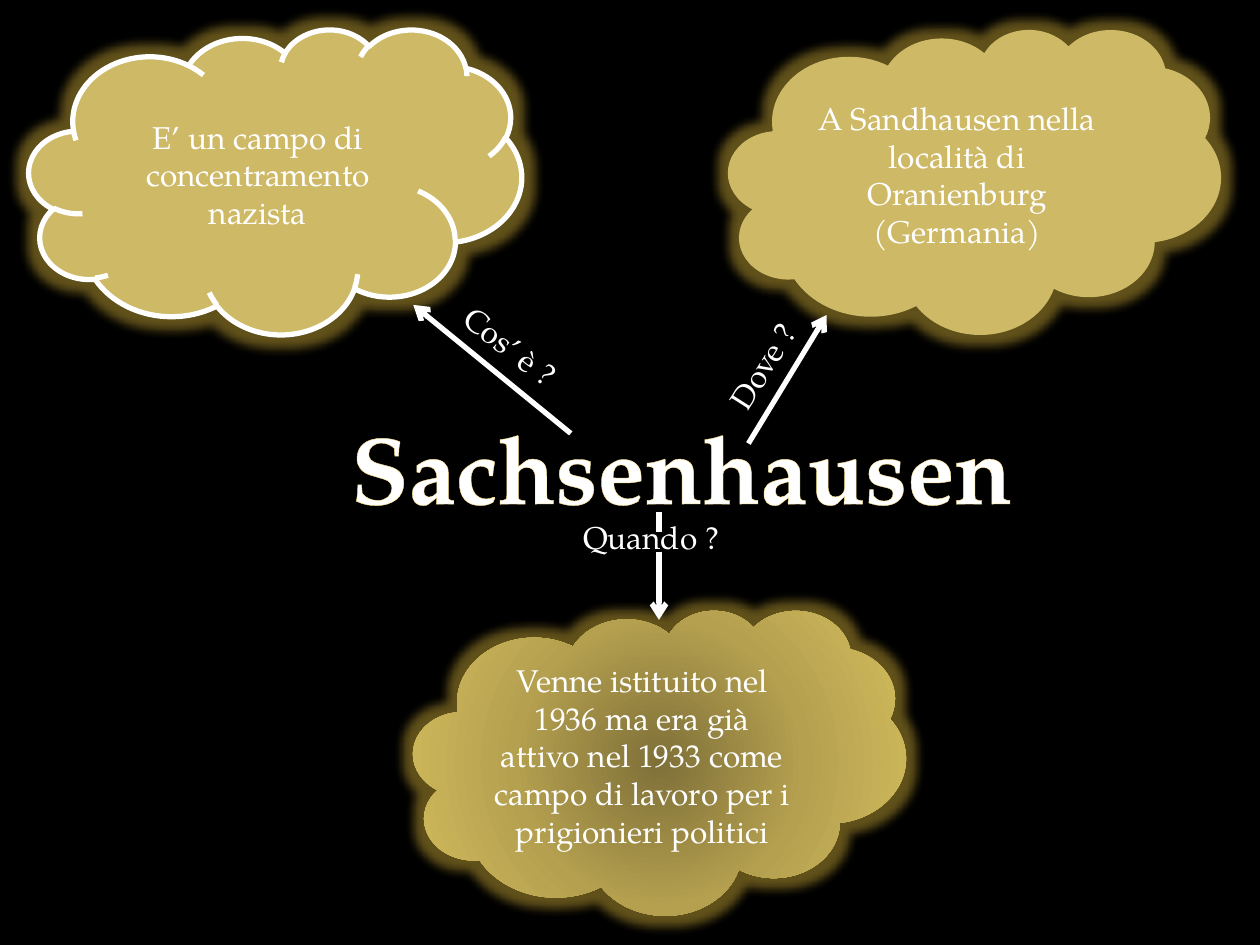
from dataclasses import dataclass

from lxml.etree import SubElement
from pptx import Presentation
from pptx.dml.color import RGBColor
from pptx.enum.shapes import MSO_CONNECTOR, MSO_SHAPE
from pptx.enum.text import MSO_ANCHOR, MSO_AUTO_SIZE, PP_ALIGN
from pptx.oxml import parse_xml
from pptx.oxml.ns import nsdecls, qn
from pptx.util import Inches, Pt


@dataclass(frozen=True)
class Theme:
    font: str = "TeX Gyre Pagella"
    background: str = "000000"
    ink: str = "FFFFFF"
    gold: str = "CEB966"
    glow: str = "F0C841"
    title_outline: str = "F7DC85"
    gradient: tuple = ((0, "7F7038"), (50, "B4A04F"), (100, "D6BE5E"))
    title_size: float = 54
    body_size: float = 18
    line_width: float = 3
    outline_width: float = 2.48
    glow_radius: float = 11
    glow_alpha: int = 40


def color(value):
    return RGBColor.from_string(value)


def write(frame, text, *, font, size, ink, bold=False, align=PP_ALIGN.LEFT):
    """Put one formatted paragraph in a text frame and return its run."""
    paragraph = frame.paragraphs[0]
    paragraph.alignment = align
    run = paragraph.add_run()
    run.text = text
    run.font.name = font
    run.font.size = Pt(size)
    run.font.bold = bold
    run.font.color.rgb = color(ink)
    return run


class MapSlide:
    """Holds the theme and the slide being drawn."""

    def __init__(self, slide, theme):
        self.slide = slide
        self.theme = theme
        self.body = dict(font=theme.font, size=theme.body_size, ink=theme.ink)
        slide.background.fill.solid()
        slide.background.fill.fore_color.rgb = color(theme.background)

    def title(self, text, left, top, width, height):
        title = self.slide.shapes.title
        title.left, title.top = Inches(left), Inches(top)
        title.width, title.height = Inches(width), Inches(height)
        frame = title.text_frame
        frame.word_wrap = False
        frame.auto_size = MSO_AUTO_SIZE.SHAPE_TO_FIT_TEXT
        frame.vertical_anchor = MSO_ANCHOR.TOP
        run = write(frame, text, font=self.theme.font, size=self.theme.title_size,
                    ink=self.theme.ink, bold=True, align=PP_ALIGN.CENTER)
        run.font._element.insert(0, parse_xml(
            f'<a:ln {nsdecls("a")} w="{Pt(self.theme.outline_width)}"><a:solidFill>'
            f'<a:srgbClr val="{self.theme.title_outline}"/></a:solidFill></a:ln>'))

    def cloud(self, text, left, top, *, outlined=False, radial=False):
        cloud = self.slide.shapes.add_shape(
            MSO_SHAPE.CLOUD, Inches(left), Inches(top), Inches(3.91), Inches(2.42))
        if radial:
            self.radial_fill(cloud)
        else:
            cloud.fill.solid()
            cloud.fill.fore_color.rgb = color(self.theme.gold)
        if outlined:
            cloud.line.color.rgb = color(self.theme.ink)
            cloud.line.width = Pt(self.theme.line_width)
        else:
            cloud.line.fill.background()
        self.glow(cloud)
        cloud.text_frame.word_wrap = True
        cloud.text_frame.vertical_anchor = MSO_ANCHOR.MIDDLE
        write(cloud.text_frame, text, align=PP_ALIGN.CENTER, **self.body)

    def radial_fill(self, shape):
        stops = "".join(
            f'<a:gs pos="{position * 1000}"><a:srgbClr val="{value}"/></a:gs>'
            for position, value in self.theme.gradient)
        shape.fill.background()
        properties = shape._element.spPr
        properties.replace(properties.find(qn("a:noFill")), parse_xml(
            f'<a:gradFill {nsdecls("a")}><a:gsLst>{stops}</a:gsLst><a:path path="circle">'
            '<a:fillToRect l="50000" t="50000" r="50000" b="50000"/></a:path></a:gradFill>'))

    def glow(self, shape):
        shape.shadow.inherit = False
        effects = shape._element.spPr.find(qn("a:effectLst"))
        effects.append(parse_xml(
            f'<a:glow {nsdecls("a")} rad="{Pt(self.theme.glow_radius)}">'
            f'<a:srgbClr val="{self.theme.glow}">'
            f'<a:alpha val="{self.theme.glow_alpha * 1000}"/></a:srgbClr></a:glow>'))

    def line(self, start, end, *, arrow=True):
        line = self.slide.shapes.add_connector(
            MSO_CONNECTOR.STRAIGHT, *map(Inches, (*start, *end)))
        line.line.color.rgb = color(self.theme.ink)
        line.line.width = Pt(self.theme.line_width)
        if arrow:
            SubElement(line.line._get_or_add_ln(), qn("a:tailEnd"), type="arrow")
        SubElement(line._element.spPr, qn("a:effectLst"))

    def label(self, text, left, top, width, *, rotation=0):
        label = self.slide.shapes.add_textbox(
            Inches(left), Inches(top), Inches(width), Inches(0.4))
        label.rotation = rotation
        label.text_frame.word_wrap = True
        label.text_frame.auto_size = MSO_AUTO_SIZE.SHAPE_TO_FIT_TEXT
        write(label.text_frame, text, **self.body)


def main():
    deck = Presentation()
    deck.slide_width, deck.slide_height = Inches(10), Inches(7.5)
    title_only = deck.slide_layouts[5]
    concept = MapSlide(deck.slides.add_slide(title_only), Theme())

    # Central topic
    concept.title("Sachsenhausen", 2.66, 3.2, 5.5, 1.01)

    # Answers
    concept.cloud("Venne istituito nel 1936 ma era già attivo nel 1933 come campo "
                  "di lavoro per i prigionieri politici", 3.28, 4.84, radial=True)
    concept.cloud("E’ un campo di concentramento nazista", 0.23, 0.23, outlined=True)
    concept.cloud("A Sandhausen nella località di Oranienburg (Germania)", 5.78, 0.23)

    # Arrows from the topic to the answers
    concept.line((5.94, 3.52), (6.56, 2.5))
    concept.line((4.53, 3.44), (3.28, 2.42))
    concept.line((5.23, 4.38), (5.23, 4.92))
    concept.line((5.23, 4.06), (5.23, 4.22), arrow=False)

    # Questions along the arrows
    concept.label("Dove ?", 5.55, 2.66, 1.05, rotation=302.4)
    concept.label("Cos’ è ?", 3.53, 2.56, 1.09, rotation=37.7)
    concept.label("Quando ?", 4.53, 4.06, 1.64)

    deck.save("out.pptx")


if __name__ == "__main__":
    main()
